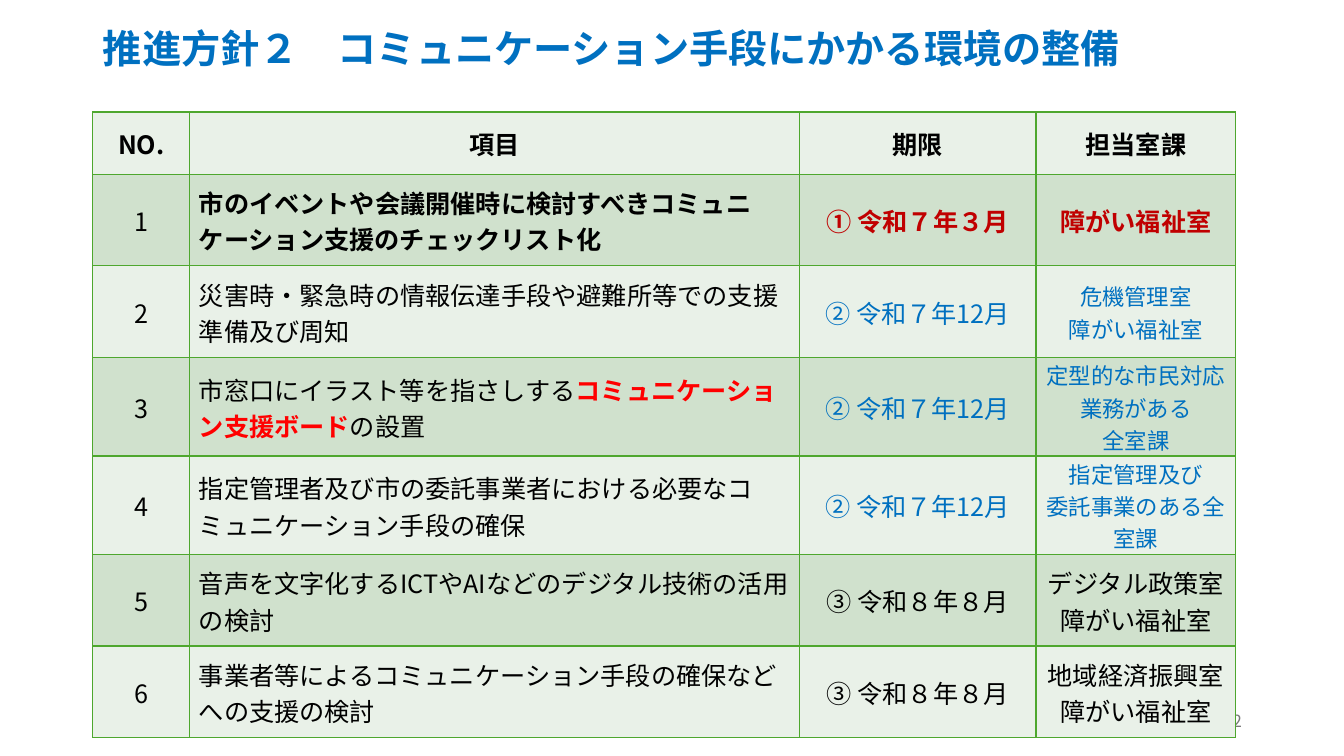
from copy import deepcopy

from lxml import etree
from pptx import Presentation
from pptx import util as u
from pptx.dml.color import RGBColor
from pptx.enum import text
from pptx.oxml import ns

FONT = "Noto Sans CJK JP"
BLACK = RGBColor(0x00, 0x00, 0x00)
BLUE = RGBColor(0x00, 0x70, 0xC0)
DARK_RED = RGBColor(0xC0, 0x00, 0x00)
RED = RGBColor(0xFF, 0x00, 0x00)
GREY = RGBColor(0x79, 0x79, 0x79)
GREEN = RGBColor(0x4E, 0xA7, 0x2E)
BANDS = [RGBColor(0xE9, 0xF1, 0xE8), RGBColor(0xD0, 0xE1, 0xCD)]

TITLE = "推進方針２　コミュニケーション手段にかかる環境の整備"
PAGE_NUMBER = "12"
COLUMN_WIDTHS = [2.44, 15.36, 5.97, 5.03]
HEADER_HEIGHT, ROW_HEIGHT, TALL_ROW_HEIGHT = 1.57, 2.31, 2.48

PLAIN = dict(size=18, color=BLACK, bold=False)
BOLD = dict(PLAIN, bold=True)
DONE = dict(BOLD, color=DARK_RED)
KEY = dict(BOLD, color=RED)
NEXT = dict(PLAIN, color=BLUE)
NEXT_SMALL = dict(NEXT, size=16)

HEADERS = ["NO.", "項目", "期限", "担当室課"]
ITEMS = [
    ([("市のイベントや会議開催時に検討すべきコミュニケーション支援のチェックリスト化", BOLD)],
     "① 令和７年３月", DONE, ["障がい福祉室"], DONE),
    ([("災害時・緊急時の情報伝達手段や避難所等での支援準備及び周知", PLAIN)],
     "② 令和７年12月", NEXT, ["危機管理室\n障がい福祉室"], NEXT_SMALL),
    ([("市窓口にイラスト等を指さしする", PLAIN),
      ("コミュニケーション支援ボード", KEY),
      ("の設置", PLAIN)],
     "② 令和７年12月", NEXT, ["定型的な市民対応業務がある", "全室課"], NEXT_SMALL),
    ([("指定管理者及び市の委託事業者における必要なコミュニケーション手段の確保", PLAIN)],
     "② 令和７年12月", NEXT, ["指定管理及び", "委託事業のある全室課"], NEXT_SMALL),
    ([("音声を文字化するICTやAIなどのデジタル技術の活用の検討", PLAIN)],
     "③ 令和８年８月", PLAIN, ["デジタル政策室\n障がい福祉室"], PLAIN),
    ([("事業者等によるコミュニケーション手段の確保などへの支援の検討", PLAIN)],
     "③ 令和８年８月", PLAIN, ["地域経済振興室\n障がい福祉室"], PLAIN),
]


def set_all(target, **values):
    for name, value in values.items():
        setattr(target, name, value)


def add_span(para, words, size, color, bold):
    span = para.add_run()
    span.text = words
    set_all(span.font, name=FONT, size=u.Pt(size), bold=bold)
    span.font.color.rgb = color
    east_asian = etree.SubElement(span.font._element, ns.qn("a:ea"))
    east_asian.set("typeface", FONT)
    return span


def write(frame, paragraphs, align):
    for index, spans in enumerate(paragraphs):
        para = frame.add_paragraph() if index else frame.paragraphs[0]
        para.alignment = align
        for words, style in spans:
            for number, line in enumerate(words.split("\n")):
                if number:
                    para.add_line_break()
                    para._p[-1].append(deepcopy(span.font._element))
                span = add_span(para, line, **style)


def add_borders(cell):
    properties = cell._tc.get_or_add_tcPr()
    for index, side in enumerate(["lnL", "lnR", "lnT", "lnB"]):
        line = etree.Element(ns.qn("a:" + side), w=str(u.Pt(1)))
        fill = etree.SubElement(line, ns.qn("a:solidFill"))
        etree.SubElement(fill, ns.qn("a:srgbClr"), val=str(GREEN))
        properties.insert(index, line)


def table_rows():
    yield HEADER_HEIGHT, [[[(header, BOLD)]] for header in HEADERS]
    for number, (item, due, due_style, offices, office_style) in enumerate(ITEMS, 1):
        height = TALL_ROW_HEIGHT if len(offices) > 1 else ROW_HEIGHT
        yield height, [[[(str(number), PLAIN)]], [item], [[(due, due_style)]],
                       [[(office, office_style)] for office in offices]]


def add_title(page):
    title = page.shapes.title
    set_all(title, left=u.Cm(2.34), top=u.Cm(0.61), width=u.Cm(30.43), height=u.Cm(1.6))
    set_all(title.text_frame, word_wrap=True, auto_size=text.MSO_AUTO_SIZE.NONE,
            vertical_anchor=text.MSO_ANCHOR.TOP)
    write(title.text_frame, [[(TITLE, dict(size=28, color=BLUE, bold=True))]], text.PP_ALIGN.LEFT)
    title.text_frame.paragraphs[0].line_spacing = 0.9


def add_page_number(page):
    box = page.shapes.add_textbox(u.Cm(23.93), u.Cm(17.65), u.Cm(7.62), u.Cm(1.02))
    set_all(box.text_frame, word_wrap=True, vertical_anchor=text.MSO_ANCHOR.MIDDLE)
    write(box.text_frame, [[(PAGE_NUMBER, dict(size=12, color=GREY, bold=False))]],
          text.PP_ALIGN.RIGHT)


def add_plan_table(page):
    rows = list(table_rows())
    total_height = sum(height for height, _ in rows)
    table = page.shapes.add_table(len(rows), len(HEADERS), u.Cm(2.34), u.Cm(2.82),
                                  u.Cm(sum(COLUMN_WIDTHS)), u.Cm(total_height)).table
    for column, width in zip(table.columns, COLUMN_WIDTHS):
        column.width = u.Cm(width)
    for row_index, (height, row) in enumerate(rows):
        table.rows[row_index].height = u.Cm(height)
        for column_index, paragraphs in enumerate(row):
            cell = table.cell(row_index, column_index)
            set_all(cell, margin_left=u.Cm(0.03), margin_right=u.Cm(0.03),
                    margin_top=u.Cm(0.03), margin_bottom=0,
                    vertical_anchor=text.MSO_ANCHOR.MIDDLE)
            cell.fill.solid()
            cell.fill.fore_color.rgb = BANDS[row_index % 2]
            add_borders(cell)
            is_item = row_index > 0 and column_index == 1
            write(cell.text_frame, paragraphs,
                  text.PP_ALIGN.LEFT if is_item else text.PP_ALIGN.CENTER)
            if is_item:
                cell.text_frame.paragraphs[0]._p.get_or_add_pPr().set("marL", str(u.Cm(0.2)))


def main():
    deck = Presentation()
    set_all(deck, slide_width=u.Cm(33.87), slide_height=u.Cm(19.05))
    page = deck.slides.add_slide(deck.slide_layouts[5])
    add_title(page)
    add_page_number(page)
    add_plan_table(page)
    deck.save("out.pptx")


if __name__ == "__main__":
    main()
